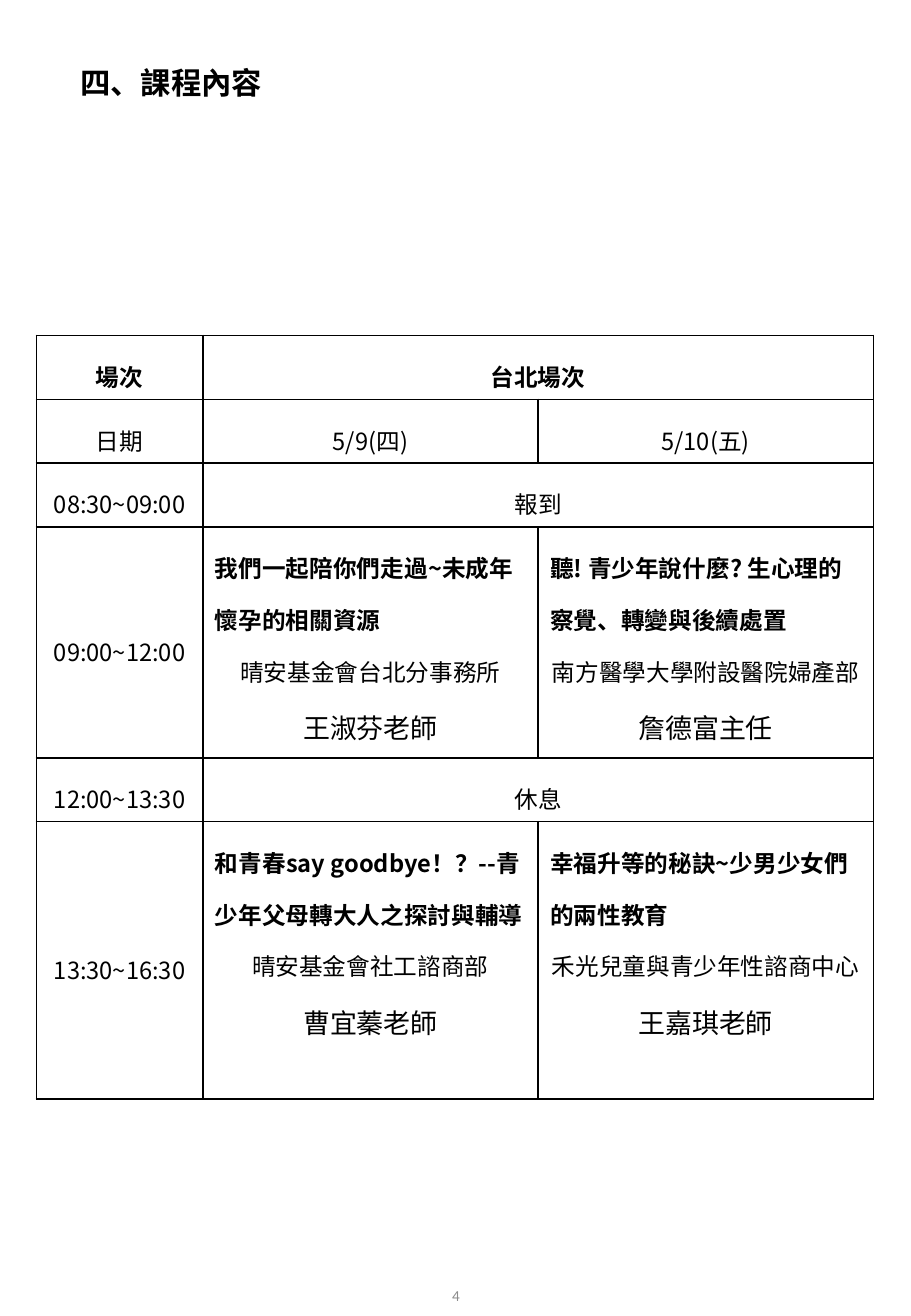
import lxml.etree
import pptx
import pptx.enum.text
import pptx.oxml.ns
import pptx.util

Inches, Pt = pptx.util.Inches, pptx.util.Pt
Align = pptx.enum.text.PP_ALIGN
Anchor = pptx.enum.text.MSO_ANCHOR
qn = pptx.oxml.ns.qn

COLORS = {"ink": "000000", "page_number": "8C8C8C"}
CJK_FONT = "Noto Sans CJK SC"


def format_paragraph(paragraph, size, bold=False, align=Align.CENTER,
                     color="ink", face=CJK_FONT, spacing=1.5):
    paragraph.alignment = align
    paragraph.line_spacing = spacing
    font = paragraph.font
    font.size, font.bold, font.name = Pt(size), bold, face
    font.color.rgb = pptx.dml.color.RGBColor.from_string(COLORS[color])
    properties = paragraph._p.get_or_add_pPr().find(qn("a:defRPr"))
    lxml.etree.SubElement(properties, qn("a:ea"), typeface=face)
    for run in paragraph.runs:
        run.font.size, run.font.bold, run.font.name = Pt(size), bold, face
        run.font.color.rgb = font.color.rgb
        lxml.etree.SubElement(run._r.get_or_add_rPr(), qn("a:ea"), typeface=face)


def add_borders(cell):
    """Put a thin line on all four sides, ahead of the cell's fill."""
    properties = cell._tc.get_or_add_tcPr()
    for position, side in enumerate(("lnL", "lnR", "lnT", "lnB")):
        line = lxml.etree.Element(qn("a:" + side), w=str(Pt(1)))
        fill = lxml.etree.SubElement(line, qn("a:solidFill"))
        lxml.etree.SubElement(fill, qn("a:srgbClr"), val=COLORS["ink"])
        properties.insert(position, line)


presentation = pptx.Presentation()
presentation.slide_width = Inches(7.5)
presentation.slide_height = Inches(10.83)
slide = presentation.slides.add_slide(presentation.slide_layouts[5])

# Heading
heading = slide.shapes.title
heading.left, heading.top = Inches(0.56), Inches(0.33)
heading.width, heading.height = Inches(6.38), Inches(10.17)
heading.text_frame.text = "四、課程內容"
heading.text_frame.vertical_anchor = Anchor.TOP
heading.text_frame.auto_size = pptx.enum.text.MSO_AUTO_SIZE.NONE
format_paragraph(heading.text_frame.paragraphs[0], 18, True, Align.LEFT)

# Timetable: a session is (topic, organisation, speaker);
# a row with two entries spans both days
timetable = [
    ("場次", "台北場次"),
    ("日期", "5/9(四)", "5/10(五)"),
    ("08:30~09:00", "報到"),
    ("09:00~12:00",
     ("我們一起陪你們走過~未成年懷孕的相關資源", "晴安基金會台北分事務所", "王淑芬老師"),
     ("聽! 青少年說什麼? 生心理的察覺、轉變與後續處置", "南方醫學大學附設醫院婦產部", "詹德富主任")),
    ("12:00~13:30", "休息"),
    ("13:30~16:30",
     ("和青春say goodbye！？--青少年父母轉大人之探討與輔導", "晴安基金會社工諮商部", "曹宜蓁老師"),
     ("幸福升等的秘訣~少男少女們的兩性教育", "禾光兒童與青少年性諮商中心", "王嘉琪老師")),
]
column_widths = [1.37, 2.76, 2.76]
row_heights = [0.44, 0.44, 0.44, 1.9, 0.45, 1.9]
session_styles = [(14, True, Align.LEFT), (14, False, Align.CENTER), (16, False, Align.CENTER)]

table = slide.shapes.add_table(
    len(row_heights), len(column_widths), Inches(0.3), Inches(2.76),
    Inches(sum(column_widths)), Inches(sum(row_heights))).table
table.first_row = table.horz_banding = False
for column, width in zip(table.columns, column_widths):
    column.width = Inches(width)
for row, height in zip(table.rows, row_heights):
    row.height = Inches(height)

for row_index, entries in enumerate(timetable):
    if len(entries) == 2:
        table.cell(row_index, 1).merge(table.cell(row_index, 2))
    for column_index, entry in enumerate(entries):
        cell = table.cell(row_index, column_index)
        if isinstance(entry, tuple):
            cell.text = "\n".join(entry)
            styles = session_styles
        else:
            cell.text = entry
            styles = [(14, row_index == 0, Align.CENTER)]
        for paragraph, style in zip(cell.text_frame.paragraphs, styles):
            format_paragraph(paragraph, *style)
        if column_index == 0 and row_index >= 3:
            cell.vertical_anchor = Anchor.MIDDLE

for cell in table.iter_cells():
    cell.fill.background()
    add_borders(cell)

# Page number
page_number = slide.shapes.add_textbox(
    Inches(2.91), Inches(10.37), Inches(1.69), Inches(0.58)).text_frame
page_number.word_wrap = True
page_number.vertical_anchor = Anchor.MIDDLE
page_number.text = "4"
format_paragraph(page_number.paragraphs[0], 9, color="page_number", face="Calibri", spacing=1.0)

presentation.save("out.pptx")
